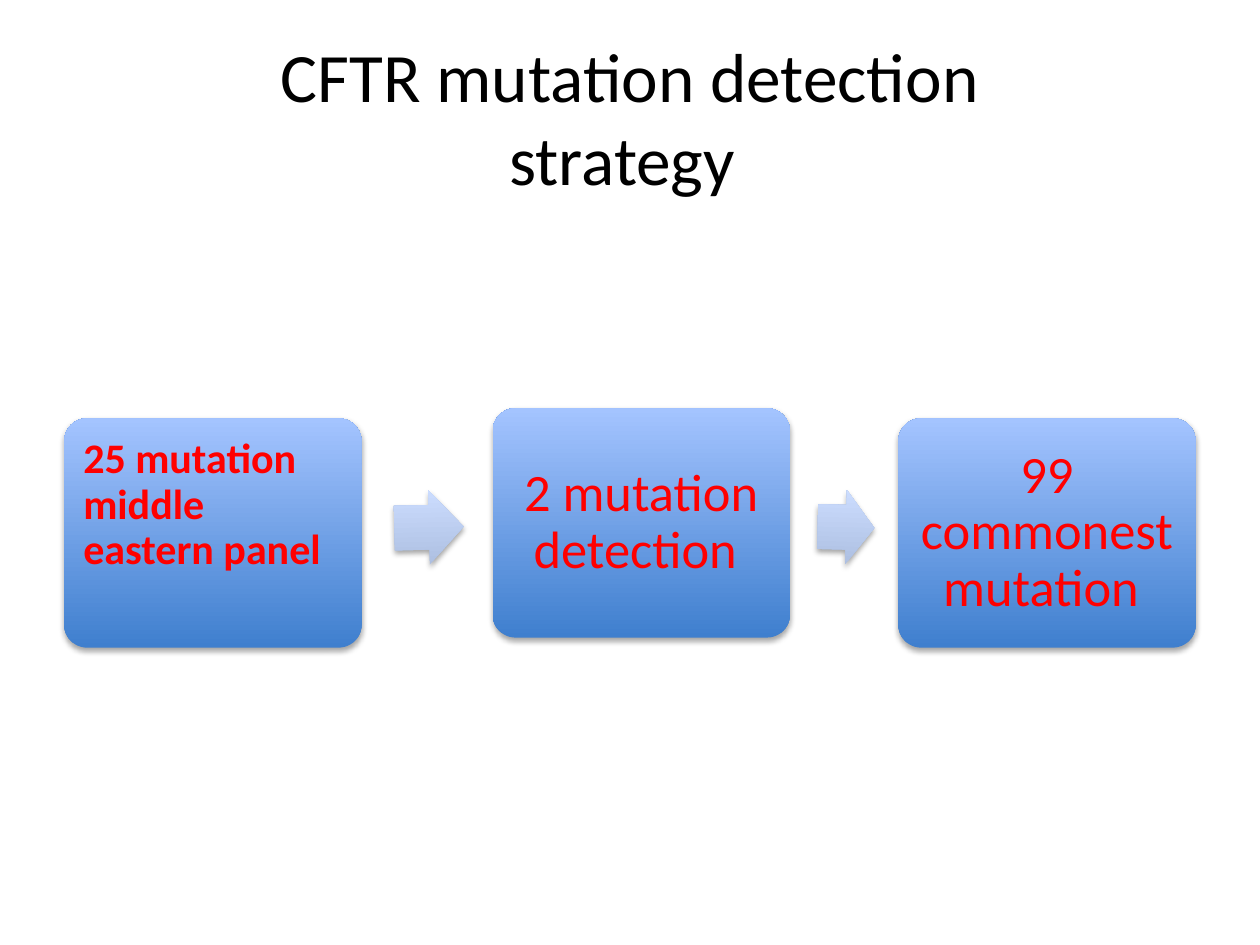
import pptx
import pptx.dml.color
import pptx.enum.shapes
import pptx.enum.text
import pptx.oxml
import pptx.oxml.ns
import pptx.util

Inches = pptx.util.Inches
RGB = pptx.dml.color.RGBColor
Shape = pptx.enum.shapes.MSO_SHAPE
Align = pptx.enum.text.PP_ALIGN
Anchor = pptx.enum.text.MSO_ANCHOR

BLACK = RGB(0x00, 0x00, 0x00)
RED = RGB(0xFF, 0x00, 0x00)
BOX_FILL = (RGB(0x3F, 0x7F, 0xCE), RGB(0xA4, 0xC4, 0xFF))
ARROW_FILL = (RGB(0xAD, 0xBF, 0xE1), RGB(0xCC, 0xDD, 0xFF))

SHADOW = (
    '<a:outerShdw %s blurRad="40000" dist="23000" dir="5400000" rotWithShape="0">'
    '<a:srgbClr val="000000"><a:alpha val="35000"/></a:srgbClr></a:outerShdw>'
    % pptx.oxml.ns.nsdecls("a")
)


def write(frame, text, size, color=RED, bold=False, align=Align.CENTER,
          anchor=Anchor.MIDDLE, inset=0.12, pitch=0.9):
    frame.word_wrap = True
    frame.auto_size = pptx.enum.text.MSO_AUTO_SIZE.NONE
    frame.vertical_anchor = anchor
    frame.margin_left = frame.margin_right = Inches(inset)
    frame.margin_top = frame.margin_bottom = Inches(inset)
    para = frame.paragraphs[0]
    para.text = text
    para.alignment = align
    para.line_spacing = pitch
    for run in para.runs:
        run.font.name = "Calibri"
        run.font.size = pptx.util.Pt(size)
        run.font.bold = bold
        run.font.color.rgb = color


def add_block(slide, kind, left, top, width, height, colors, adjust):
    block = slide.shapes.add_shape(
        kind, Inches(left), Inches(top), Inches(width), Inches(height))
    for index, value in enumerate(adjust):
        block.adjustments[index] = value
    block.fill.gradient()
    block.fill.gradient_angle = 90
    for stop, color in zip(block.fill.gradient_stops, colors):
        stop.color.rgb = color
    block.line.fill.background()
    block.shadow.inherit = False
    effects = block._element.spPr.find(pptx.oxml.ns.qn("a:effectLst"))
    effects.append(pptx.oxml.parse_xml(SHADOW))
    return block


def add_step(slide, left, top, text, size=30, **style):
    box = add_block(slide, Shape.ROUNDED_RECTANGLE, left, top, 2.36, 1.82,
                    BOX_FILL, (0.1,))
    write(box.text_frame, text, size, **style)


def add_arrow(slide, left, width, turn):
    arrow = add_block(slide, Shape.RIGHT_ARROW, left, 3.89, width, 0.59,
                      ARROW_FILL, (0.6, 0.5))
    arrow.rotation = turn


def add_title(slide, text):
    title = slide.shapes.title
    title.left, title.top = Inches(0.5), Inches(0.3)
    title.width, title.height = Inches(9), Inches(1.25)
    write(title.text_frame, text, 39.6, color=BLACK, inset=0.1, pitch=1.0)


def main():
    """Build the mutation detection slide and save it."""
    deck = pptx.Presentation()
    deck.slide_width, deck.slide_height = Inches(10), Inches(7.5)
    slide = deck.slides.add_slide(deck.slide_layouts[5])
    add_title(slide, "CFTR mutation detection\nstrategy ")
    add_step(slide, 0.51, 3.32, "25 mutation middle eastern panel", size=24,
             bold=True, align=Align.LEFT, anchor=Anchor.TOP, inset=0.1)
    add_arrow(slide, 3.13, 0.55, 358.7)
    add_step(slide, 3.91, 3.24, "2 mutation detection ")
    add_arrow(slide, 6.49, 0.45, 1.4)
    add_step(slide, 7.13, 3.32, "99 commonest mutation ")
    deck.save("out.pptx")


if __name__ == "__main__":
    main()
